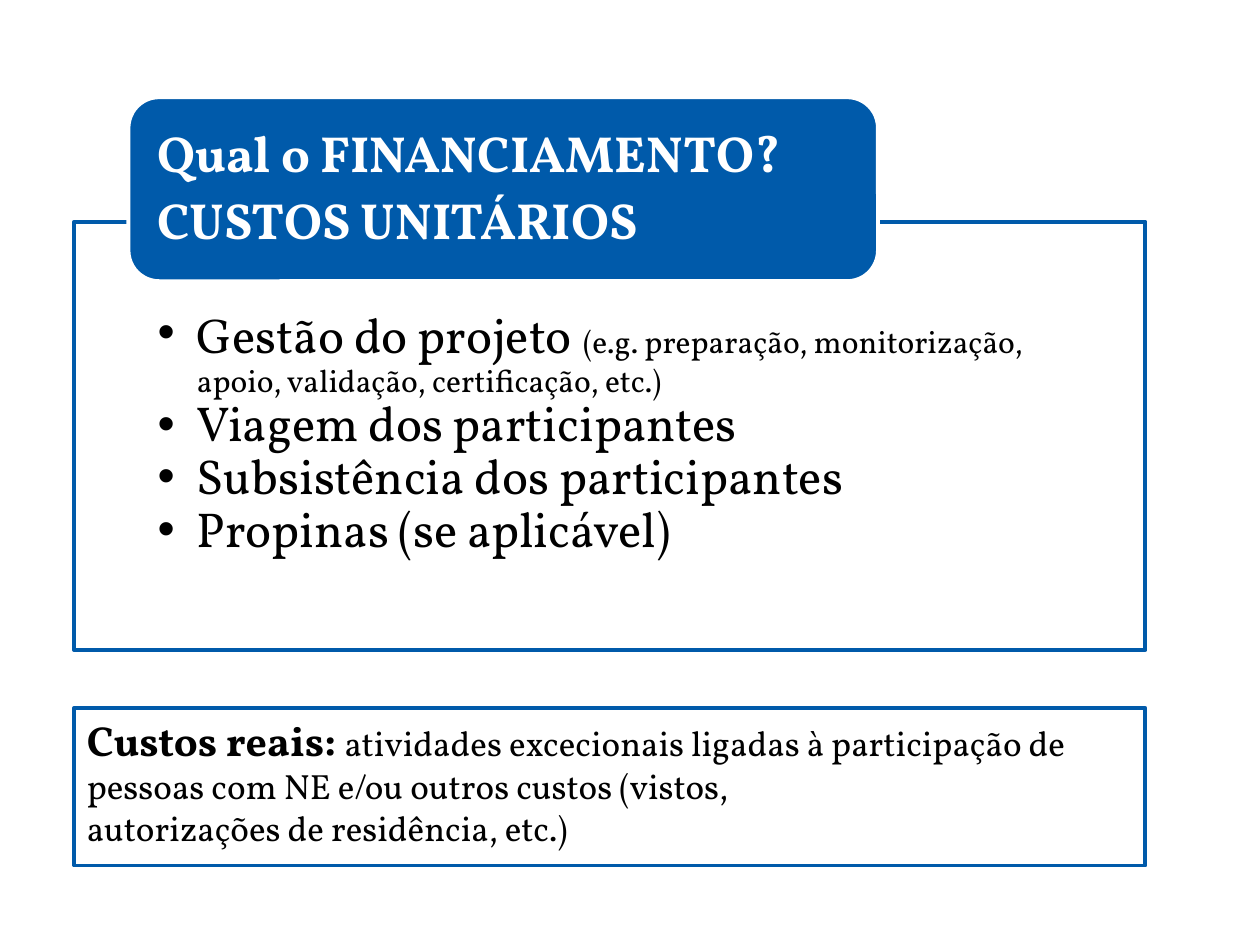
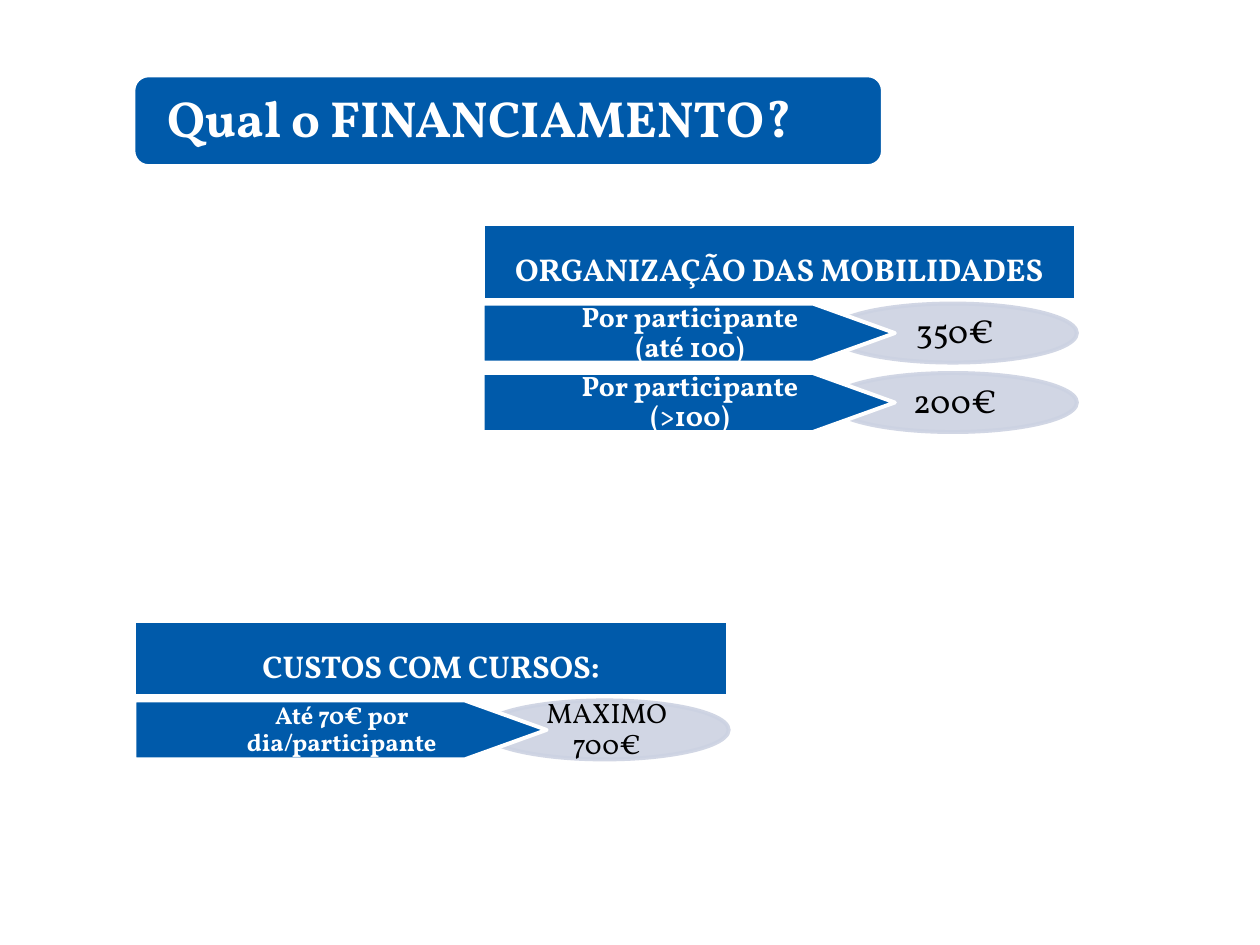
from lxml.etree import SubElement
from pptx import Presentation
from pptx.dml.color import RGBColor
from pptx.enum.shapes import MSO_SHAPE
from pptx.enum.text import MSO_ANCHOR, MSO_AUTO_SIZE, PP_ALIGN
from pptx.oxml.ns import qn
from pptx.util import Cm, Pt

BLUE, WHITE, BLACK, MIST = "005AAA", "FFFFFF", "000000", "CCD2E2"
TITLE_ONLY, TITLE_AND_BODY = 5, 1


def rgb(value):
    return RGBColor.from_string(value)


def set_all(target, values):
    for name, value in values.items():
        setattr(target, name, value)


class Deck:
    """Holds the shared style and the current slide."""

    font = "Vollkorn"
    line_width = Pt(2.25)

    def __init__(self):
        self.prs = Presentation()
        set_all(self.prs, {"slide_width": Cm(25.4), "slide_height": Cm(19.05)})

    def add_slide(self, layout):
        self.s = self.prs.slides.add_slide(self.prs.slide_layouts[layout])

    def shape(self, kind, box, fill, line, alpha=None):
        sp = self.s.shapes.add_shape(kind, *map(Cm, box))
        sp.shadow.inherit = False
        sp.fill.solid()
        sp.fill.fore_color.rgb = rgb(fill)
        sp.line.color.rgb = rgb(line)
        sp.line.width = self.line_width
        if alpha:
            for clr in sp.element.spPr.iter(qn("a:srgbClr")):
                SubElement(clr, qn("a:alpha")).set("val", str(alpha * 1000))
        return sp

    def fill_text(self, sp, paragraphs, color, insets, anchor=MSO_ANCHOR.MIDDLE, **fmt):
        tf = sp.text_frame
        sides = ("margin_left", "margin_top", "margin_right", "margin_bottom")
        set_all(tf, dict(zip(sides, map(Cm, insets))))
        set_all(tf, {"word_wrap": True, "auto_size": MSO_AUTO_SIZE.NONE,
                     "vertical_anchor": anchor})
        for i, runs in enumerate(paragraphs):
            p = tf.add_paragraph() if i else tf.paragraphs[0]
            set_all(p, {"alignment": PP_ALIGN.LEFT, "line_spacing": 0.9,
                        "space_before": Pt(0), "space_after": Pt(0), **fmt})
            for text, size, bold in runs:
                for j, part in enumerate(text.split("\n")):
                    if j:
                        p.add_line_break()
                    r = p.add_run()
                    r.text = part
                    set_all(r.font, {"name": self.font, "size": Pt(size), "bold": bold})
                    r.font.color.rgb = rgb(color)

    def place(self, sp, box):
        set_all(sp, dict(zip(("left", "top", "width", "height"), map(Cm, box))))
        self.s.shapes.element.append(sp.element)

    def banner(self, box, lines, pad):
        self.shape(MSO_SHAPE.ROUNDED_RECTANGLE, box, BLUE, WHITE)
        title = self.s.shapes.title
        self.place(title, box)
        self.fill_text(title, [[(line, 29, True)] for line in lines], WHITE,
                       (pad, 0, pad, 0), space_after=Pt(7))

    def bullets(self, box, items):
        self.shape(MSO_SHAPE.RECTANGLE, box, WHITE, BLUE)
        body = self.s.placeholders[1]
        self.place(body, box)
        self.fill_text(body, items, BLACK, (1.68, 1.68, 1.68, 0.56), MSO_ANCHOR.TOP)
        for p in body.text_frame.paragraphs:
            pPr = p._p.get_or_add_pPr()
            pPr.set("marL", str(Cm(0.79)))
            pPr.set("indent", str(Cm(-0.79)))

    def note(self, box, runs):
        sp = self.shape(MSO_SHAPE.RECTANGLE, box, WHITE, BLUE)
        self.fill_text(sp, [runs], BLACK, (0.25, 0.13, 0.25, 0.13), MSO_ANCHOR.TOP,
                       line_spacing=1.0)

    def price_row(self, x, y, label, label_size, amount, amount_size):
        oval = self.shape(MSO_SHAPE.OVAL, (x + 6.98, y, 5, 1.19), MIST, MIST, 90)
        self.fill_text(oval, [[(amount, amount_size, False)]], BLACK,
                       (0.38, 0.28, 0.3, 0.28), alignment=PP_ALIGN.CENTER)
        arrow = self.shape(MSO_SHAPE.PENTAGON, (x, y, 8.31, 1.19), BLUE, WHITE)
        arrow.adjustments[0] = 1.39
        self.fill_text(arrow, [[(label, label_size, True)]], WHITE,
                       (1.78, 0.03, 0.9, 0.03), alignment=PP_ALIGN.CENTER)

    def price_list(self, x, y, heading, rows):
        sp = self.shape(MSO_SHAPE.RECTANGLE, (x, y, 11.96, 1.52), BLUE, WHITE)
        self.fill_text(sp, [[(heading, 18, True)]], WHITE, (0.08, 0.36, 0.08, 0.08),
                       alignment=PP_ALIGN.CENTER, line_spacing=1.0)
        for i, row in enumerate(rows):
            self.price_row(x, y + 1.6 + 1.4 * i, *row)


def main():
    deck = Deck()

    deck.add_slide(TITLE_AND_BODY)
    deck.bullets((1.5, 4.47, 21.59, 8.64), [
        [("Gestão do projeto", 28, False), (" ", 32, False),
         ("(e.g. preparação, monitorização, apoio, validação, certificação, etc.)",
          18, False)],
        [("Viagem dos participantes", 28, False)],
        [("Subsistência dos participantes", 28, False)],
        [("Propinas (se aplicável)", 28, False)],
    ])
    deck.banner((2.59, 1.96, 15.11, 3.71),
                ["Qual o FINANCIAMENTO?", "CUSTOS UNITÁRIOS"], 0.58)
    deck.note((1.5, 14.27, 21.59, 3.18), [
        ("Custos reais: ", 24, True),
        ("atividades excecionais ligadas à participação de pessoas com NE "
         "e/ou outros custos (vistos,\nautorizações de residência, etc.)", 20, False),
    ])

    deck.add_slide(TITLE_ONLY)
    deck.banner((2.69, 1.52, 15.11, 1.83), ["Qual o FINANCIAMENTO?"], 0.69)
    deck.price_list(9.73, 4.52, "ORGANIZAÇÃO DAS MOBILIDADES", [
        ("Por participante (até 100)", 16, "350€", 19),
        ("Por participante (>100)", 16, "200€", 19),
    ])
    deck.price_list(2.71, 12.52, "CUSTOS COM CURSOS:", [
        ("Até 70€ por dia/participante", 14, "MAXIMO 700€", 16),
    ])

    deck.prs.save("out.pptx")


if __name__ == "__main__":
    main()
